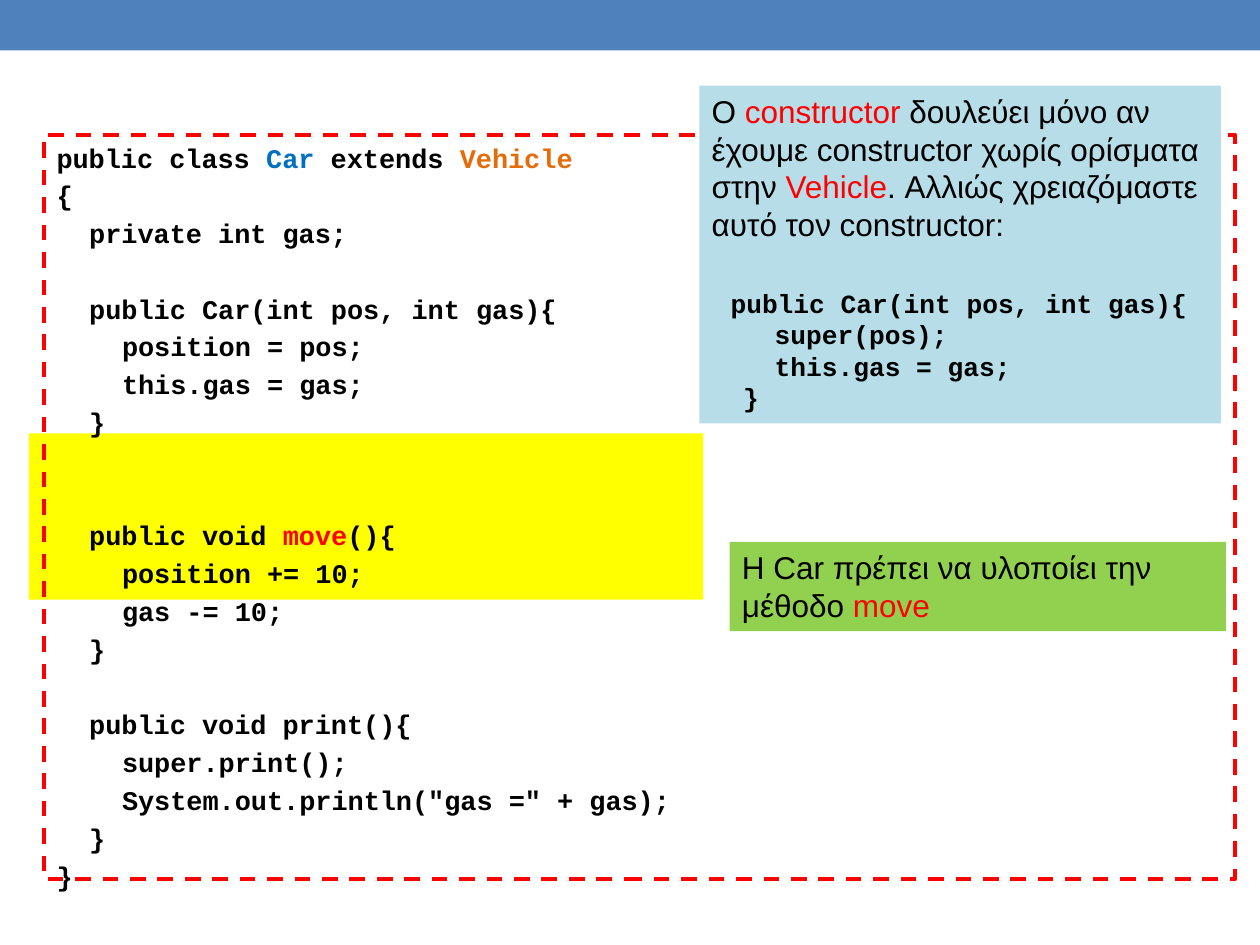
from pptx import Presentation
from pptx.dml.color import RGBColor
from pptx.enum.dml import MSO_LINE
from pptx.enum.shapes import MSO_SHAPE
from pptx.enum.text import MSO_ANCHOR, PP_ALIGN
from pptx.util import Inches, Pt

COLORS = {
    "bar": "4F81BD", "highlight": "FFFF00", "red": "FF0000", "black": "000000",
    "class": "0070C0", "parent": "E46C0A", "green": "92D050", "blue": "B7DEE8",
}
CODE_SIZE, CODE_LINE, CODE_GAP = 15.4, 18.5, 3.08
CODE_STEP = 0.26  # inches for one indent level of two characters

# (indent level, blank lines above, runs)
CAR_CLASS = [
    (0, 0, [("public class ", "black"), ("Car", "class"),
            (" extends ", "black"), ("Vehicle", "parent")]),
    (0, 0, [("{", "black")]),
    (1, 0, [("private int gas;", "black")]),
    (1, 1, [("public Car(int pos, int gas){", "black")]),
    (2, 0, [("position = pos;", "black")]),
    (2, 0, [("this.gas = gas;", "black")]),
    (1, 0, [("}", "black")]),
    (1, 2, [("public void ", "black"), ("move", "red"), ("(){", "black")]),
    (2, 0, [("position += 10;", "black")]),
    (2, 0, [("gas -= 10;", "black")]),
    (1, 0, [("}", "black")]),
    (1, 1, [("public void print(){", "black")]),
    (2, 0, [("super.print();", "black")]),
    (2, 0, [('System.out.println("gas =" + gas);', "black")]),
    (1, 0, [("}", "black")]),
    (0, 0, [("}", "black")]),
]
CONSTRUCTOR_NOTE = [
    ("O ", "black"), ("constructor ", "red"),
    ("δουλεύει μόνο αν έχουμε constructor χωρίς ορίσματα στην ", "black"),
    ("Vehicle", "red"),
    (". Αλλιώς χρειαζόμαστε αυτό τον constructor:", "black"),
]
# (indent in inches, points above, text)
CONSTRUCTOR_CODE = [
    (0.15, 25, "public Car(int pos, int gas){"),
    (0.5, 0, "super(pos);"),
    (0.5, 0, "this.gas = gas;"),
    (0.25, 0, "}"),
]
MOVE_NOTE = [("H Car πρέπει να υλοποίει την μέθοδο ", "black"), ("move", "red")]


def rgb(name):
    return RGBColor.from_string(COLORS[name])


def add_box(slide, box, fill=None):
    """Add a plain rectangle with top-left text, filled or hollow."""
    sp = slide.shapes.add_shape(MSO_SHAPE.RECTANGLE, *map(Inches, box))
    sp.shadow.inherit = False
    sp.line.fill.background()
    if fill:
        sp.fill.solid()
        sp.fill.fore_color.rgb = rgb(fill)
    else:
        sp.fill.background()
    sp.text_frame.word_wrap = True
    sp.text_frame.vertical_anchor = MSO_ANCHOR.TOP
    return sp


def write(p, runs, font, size, line, before=0, indent=0, bold=False):
    p.alignment = PP_ALIGN.LEFT
    p.font.name, p.font.size, p.font.bold = font, Pt(size), bold
    p.line_spacing, p.space_before = Pt(line), Pt(before)
    if indent:
        pPr = p._p.get_or_add_pPr()
        pPr.set("marL", str(Inches(indent)))
        pPr.set("indent", "0")
    for text, color in runs:
        r = p.add_run()
        r.text = text
        r.font.color.rgb = rgb(color)


def paragraphs(tf):
    """Yield the first paragraph of a frame, then new ones."""
    yield tf.paragraphs[0]
    while True:
        yield tf.add_paragraph()


def add_class_listing(slide, box):
    sp = add_box(slide, box)
    sp.line.color.rgb = rgb("red")
    sp.line.width = Pt(2.25)
    sp.line.dash_style = MSO_LINE.DASH
    for (level, blanks, runs), p in zip(CAR_CLASS, paragraphs(sp.text_frame)):
        before = CODE_GAP + blanks * (CODE_LINE + CODE_GAP)
        write(p, runs, "Courier New", CODE_SIZE, CODE_LINE, before,
              level * CODE_STEP, bold=True)


def add_note(slide, box, fill, runs, code=()):
    tf = add_box(slide, box, fill).text_frame
    write(tf.paragraphs[0], runs, "Arial", 18, 21.6)
    for indent, before, text in code:
        write(tf.add_paragraph(), [(text, "black")], "Courier New", 15, 18,
              before, indent, bold=True)


def main():
    prs = Presentation()
    prs.slide_width, prs.slide_height = Inches(10), Inches(7.5)
    slide = prs.slides.add_slide(prs.slide_layouts[6])
    add_box(slide, (0, 0, 10, 0.4), "bar")
    add_box(slide, (0.23, 3.44, 5.35, 1.32), "highlight")
    add_class_listing(slide, (0.35, 1.07, 9.45, 5.91))
    add_note(slide, (5.79, 4.3, 3.94, 0.71), "green", MOVE_NOTE)
    add_note(slide, (5.55, 0.68, 4.14, 2.68), "blue",
             CONSTRUCTOR_NOTE, CONSTRUCTOR_CODE)
    prs.save("out.pptx")


if __name__ == "__main__":
    main()
